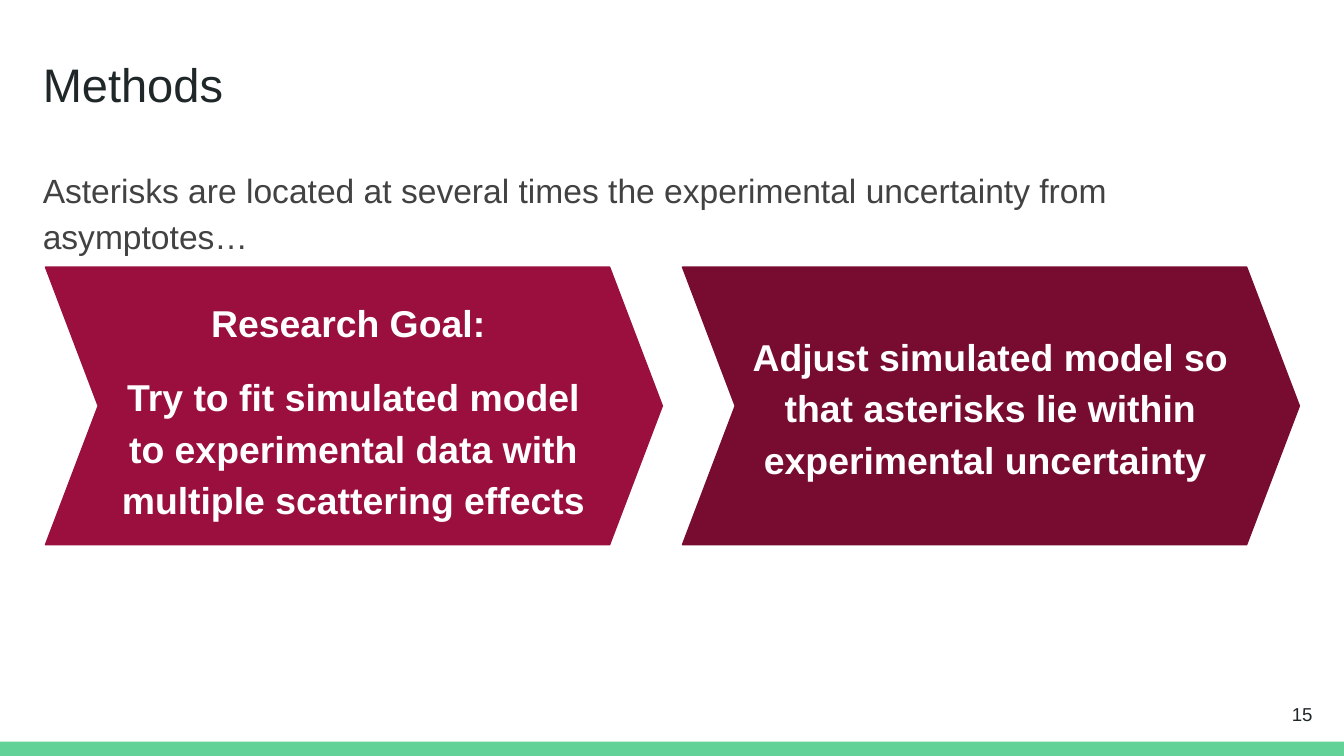
from pptx import Presentation
from pptx.dml.color import RGBColor
from pptx.enum.shapes import MSO_SHAPE
from pptx.enum.text import MSO_ANCHOR, MSO_AUTO_SIZE, PP_ALIGN
from pptx.util import Inches, Pt

GREEN = RGBColor(0x63, 0xD2, 0x97)
INK = RGBColor(0x20, 0x27, 0x29)
GREY = RGBColor(0x42, 0x42, 0x42)
CRIMSON = RGBColor(0x9A, 0x0F, 0x3E)
MAROON = RGBColor(0x78, 0x0B, 0x30)
WHITE = RGBColor(0xFF, 0xFF, 0xFF)

WIDTH = Inches(10)
HEIGHT = WIDTH * 9 // 16
ARROW_LEFT, ARROW_TOP, ARROW_WIDTH, ARROW_HEIGHT = 3.38, 35.34, 45.9, 36.72
ARROW_STEP = 47.4


def write(frame, texts, font="Arial", size=18, color=INK, bold=False,
          align=PP_ALIGN.LEFT, spacing=1.0, before=0, after=0):
    for index, text in enumerate(texts):
        para = frame.add_paragraph() if index else frame.paragraphs[0]
        para.alignment = align
        para.line_spacing = spacing
        para.space_before = Pt(before if index else 0)
        para.space_after = Pt(after if index else 0)
        span = para.add_run()
        span.text = text
        span.font.name = font
        span.font.size = Pt(size)
        span.font.bold = bold
        span.font.color.rgb = color


class Slide:
    font = "Arial"
    margin = Inches(0.1)

    def __init__(self, deck):
        self.page = deck.slides.add_slide(deck.slide_layouts[5])
        self.page.background.fill.solid()
        self.page.background.fill.fore_color.rgb = WHITE

    def area(self, left, top, width, height):
        return (round(left * WIDTH / 100), round(top * HEIGHT / 100),
                round(width * WIDTH / 100), round(height * HEIGHT / 100))

    def fill_text(self, box, texts, anchor=MSO_ANCHOR.TOP, **style):
        frame = box.text_frame
        frame.word_wrap = True
        frame.auto_size = MSO_AUTO_SIZE.NONE
        frame.vertical_anchor = anchor
        frame.margin_left = frame.margin_right = self.margin
        frame.margin_top = frame.margin_bottom = self.margin
        write(frame, texts, font=self.font, **style)

    def title(self, text, *shares):
        box = self.page.shapes.title
        box.left, box.top, box.width, box.height = self.area(*shares)
        self.fill_text(box, [text], size=25.2)

    def text(self, texts, *shares, **style):
        box = self.page.shapes.add_textbox(*self.area(*shares))
        self.fill_text(box, texts, **style)

    def shape(self, kind, color, *shares):
        shape = self.page.shapes.add_shape(kind, *self.area(*shares))
        shape.shadow.inherit = False
        shape.fill.solid()
        shape.fill.fore_color.rgb = color
        shape.line.fill.background()
        return shape

    def arrow(self, column, color):
        arrow = self.shape(MSO_SHAPE.CHEVRON, color, ARROW_LEFT + column * ARROW_STEP,
                           ARROW_TOP, ARROW_WIDTH, ARROW_HEIGHT)
        arrow.adjustments[0] = 0.19
        arrow.line.color.rgb = color
        arrow.line.width = Pt(0.75)


def main():
    deck = Presentation()
    deck.slide_width, deck.slide_height = WIDTH, HEIGHT
    slide = Slide(deck)
    slide.shape(MSO_SHAPE.RECTANGLE, GREEN, 0, 98.1, 100, 1.9)
    slide.title("Methods", 2.18, 5.5, 93.2, 11.2)
    slide.text(["Asterisks are located at several times the experimental uncertainty "
                "from asymptotes…"],
               2.2, 19.85, 95.6, 9.6, color=GREY, spacing=1.15)
    goal = ["Research Goal: ",
            "Try to fit simulated model to experimental data with multiple scattering effects"]
    adjustment = ["Adjust simulated model so that asterisks lie within "
                  "experimental uncertainty "]
    steps = [(CRIMSON, goal, (7.36, 37.08, 37.9, 33.24)),
             (MAROON, adjustment, (54.95, 41.5, 37.5, 23.3))]
    for column, (color, texts, shares) in enumerate(steps):
        slide.arrow(column, color)
        slide.text(texts, *shares, size=20, color=WHITE, bold=True,
                   align=PP_ALIGN.CENTER, spacing=1.15, before=12, after=12)
    slide.text(["15"], 92.65, 90.67, 6, 7.65, size=10,
               align=PP_ALIGN.RIGHT, anchor=MSO_ANCHOR.MIDDLE)
    deck.save("out.pptx")


if __name__ == "__main__":
    main()
